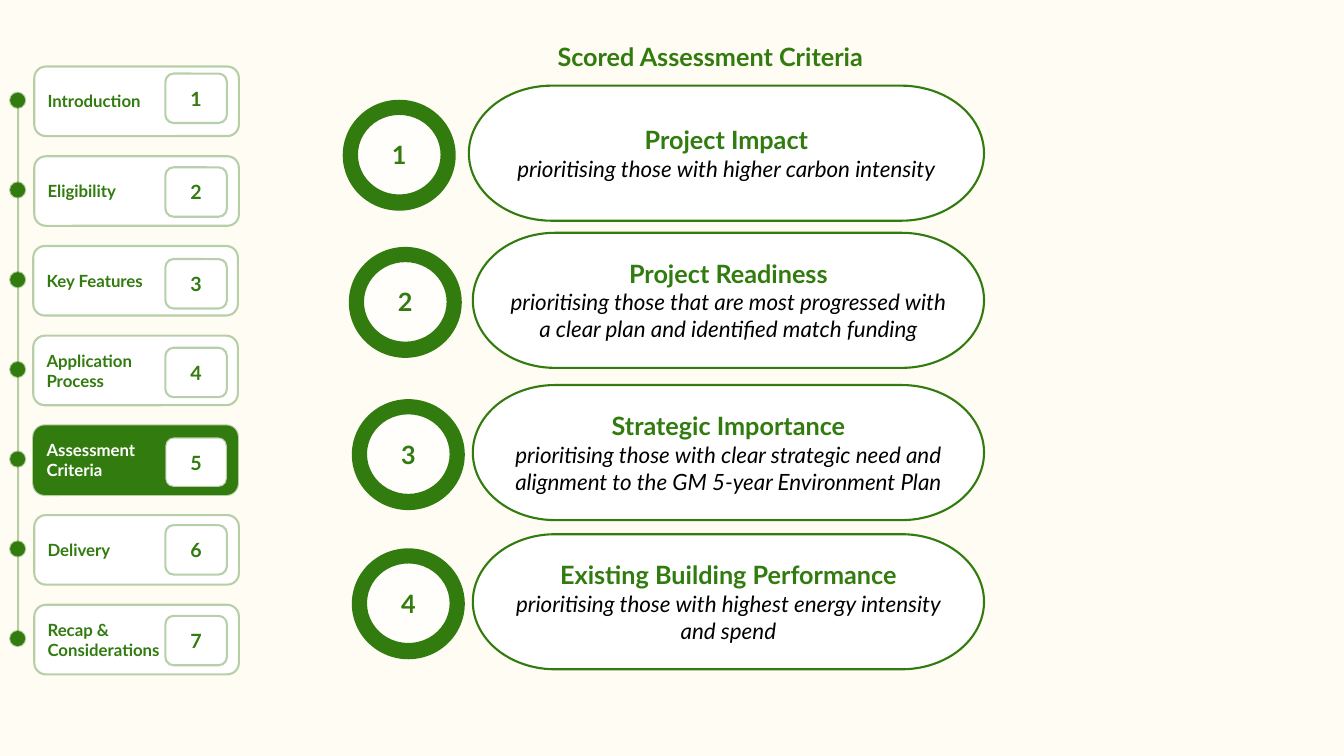
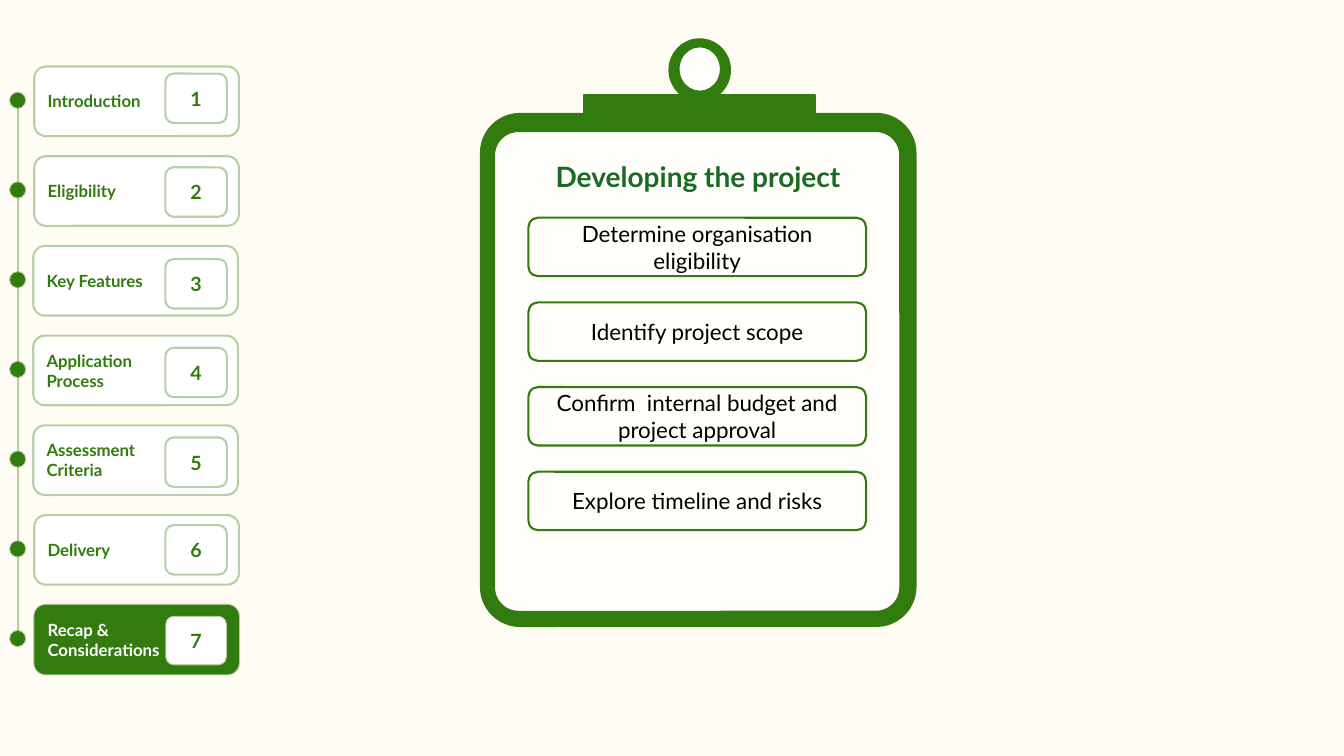
import pptx
import pptx.dml.color
import pptx.enum.shapes
import pptx.enum.text
import pptx.oxml
import pptx.oxml.ns
import pptx.util

SHAPE = pptx.enum.shapes.MSO_SHAPE
ALIGN = pptx.enum.text.PP_ALIGN
MIDDLE = pptx.enum.text.MSO_ANCHOR.MIDDLE
Inches = pptx.util.Inches

FONT = "Lato"
GREEN = "327B0F"
TITLE_GREEN = "196B24"
CREAM = "FFFCF3"
PAPER = "FFFEFB"
WHITE = "FFFFFF"
BLACK = "000000"
LINE_WIDTH = 1.5
FADED = 35

# Each section: label lines, left edge of its box, drop of its number below the box top
SECTIONS = [
    (["Introduction"], 0.34, 0.07),
    (["Eligibility"], 0.34, 0.11),
    (["Key Features"], 0.33, 0.13),
    (["Application", "Process"], 0.33, 0.12),
    (["Assessment", "Criteria"], 0.33, 0.12),
    (["Delivery"], 0.34, 0.1),
    (["Recap &", "Considerations"], 0.34, 0.11),
]
SECTION_TOP, SECTION_PITCH = 0.66, 0.89

# Each criterion: name, explanation, left edge of its ring, left and top edge of its pill
CRITERIA = [
    ("Project Impact", "prioritising those with higher carbon intensity", 3.41, 4.65, 0.85),
    ("Project Readiness",
     "prioritising those that are most progressed with a clear plan and identified match funding",
     3.47, 4.69, 2.31),
    ("Strategic Importance",
     "prioritising those with clear strategic need and alignment to the GM 5-year Environment Plan",
     3.5, 4.69, 3.82),
    ("Existing Building Performance",
     "prioritising those with highest energy intensity and spend", 3.5, 4.69, 5.3),
]
PILL_RIGHT = 9.76

STEPS = [
    "Determine organisation eligibility",
    "Identify project scope",
    "Confirm  internal budget and project approval",
    "Explore timeline and risks",
]
STEP_TOP, STEP_PITCH = 2.16, 0.84


def color(value):
    return pptx.dml.color.RGBColor.from_string(value)


def style_line(line, opacity=100):
    line.color.rgb = color(GREEN)
    line.width = pptx.util.Pt(LINE_WIDTH)
    if opacity < 100:
        tint = line.fill._xPr.find(".//" + pptx.oxml.ns.qn("a:srgbClr"))
        alpha = pptx.oxml.parse_xml(
            f'<a:alpha {pptx.oxml.ns.nsdecls("a")} val="{opacity * 1000}"/>')
        tint.append(alpha)


def add_box(shapes, kind, left, top, width, height, fill, opacity=100, corner=None):
    box = shapes.add_shape(kind, Inches(left), Inches(top), Inches(width), Inches(height))
    box.shadow.inherit = False
    box.fill.solid()
    box.fill.fore_color.rgb = color(fill)
    style_line(box.line, opacity)
    if corner is not None:
        box.adjustments[0] = corner
    return box


def add_line(shapes, left, top, bottom, opacity):
    line = shapes.add_connector(pptx.enum.shapes.MSO_CONNECTOR.STRAIGHT,
                                Inches(left), Inches(top), Inches(left), Inches(bottom))
    style_line(line.line, opacity)
    effects = pptx.oxml.parse_xml(f'<a:effectLst {pptx.oxml.ns.nsdecls("a")}/>')
    line._element.spPr.append(effects)


def write(box, lines, size, ink, bold=False, align=ALIGN.CENTER):
    """Fill the box with one paragraph for each line, all in one style."""
    frame = box.text_frame
    frame.word_wrap = True
    frame.vertical_anchor = MIDDLE
    frame.text = "\n".join(lines)
    for para in frame.paragraphs:
        para.alignment = align
        style_font(para.font, size, ink, bold)


def style_font(font, size, ink, bold=False, italic=False):
    font.name = FONT
    font.size = pptx.util.Pt(size)
    font.bold = bold
    font.italic = italic
    font.color.rgb = color(ink)


def add_title(slide, text, left, top, width, height, size, ink):
    """Fill the title placeholder and bring it in front of what is drawn so far."""
    title = slide.shapes.title
    title.left, title.top = Inches(left), Inches(top)
    title.width, title.height = Inches(width), Inches(height)
    write(title, [text], size, ink, bold=True, align=ALIGN.LEFT)
    title.text_frame.auto_size = pptx.enum.text.MSO_AUTO_SIZE.SHAPE_TO_FIT_TEXT
    slide.shapes._spTree.append(title._element)


def add_navigation(slide, current):
    """Draw the section list with the current section (counted from 1) filled."""
    shapes = slide.shapes.add_group_shape().shapes
    for index, (label, left, drop) in enumerate(SECTIONS):
        number = index + 1
        top = SECTION_TOP + index * SECTION_PITCH
        fill, ink = (GREEN, WHITE) if number == current else (WHITE, GREEN)
        box = add_box(shapes, SHAPE.ROUNDED_RECTANGLE, left, top, 2.03, 0.69, fill, FADED)
        write(box, label, 12, ink, bold=True, align=ALIGN.LEFT)
        badge = add_box(shapes, SHAPE.ROUNDED_RECTANGLE, 1.64, top + drop, 0.61, 0.49,
                        WHITE, FADED)
        write(badge, [str(number)], 14, GREEN, bold=True)

    dot_top, dot_size = 0.92, 0.15
    last_dot_top = dot_top + (len(SECTIONS) - 1) * SECTION_PITCH
    add_line(shapes, 0.18, dot_top, last_dot_top + dot_size / 2, FADED)
    for index in range(len(SECTIONS)):
        add_box(shapes, SHAPE.OVAL, 0.1, dot_top + index * SECTION_PITCH,
                dot_size, dot_size, GREEN, FADED)


def add_criterion(shapes, number, name, explanation, ring_left, pill_left, pill_top):
    ring_top = pill_top + 0.15
    add_box(shapes, SHAPE.OVAL, ring_left, ring_top, 1.1, 1.08, GREEN)
    disc = add_box(shapes, SHAPE.OVAL, ring_left + 0.13, ring_top + 0.13, 0.84, 0.81, PAPER)
    write(disc, [str(number)], 18, GREEN, bold=True)
    pill = add_box(shapes, SHAPE.FLOWCHART_TERMINATOR, pill_left, pill_top,
                   PILL_RIGHT - pill_left, 1.34, WHITE)
    write(pill, [name, explanation], 18, GREEN, bold=True)
    style_font(pill.text_frame.paragraphs[1].font, 16, BLACK, italic=True)


def add_clipboard(shapes):
    add_box(shapes, SHAPE.ROUNDED_RECTANGLE, 4.77, 1.13, 4.31, 5.08, GREEN, corner=0.09)
    add_box(shapes, SHAPE.ROUNDED_RECTANGLE, 4.9, 1.3, 4.03, 4.77, PAPER, corner=0.06)
    add_box(shapes, SHAPE.RECTANGLE, 5.79, 0.94, 2.29, 0.2, GREEN)
    add_box(shapes, SHAPE.OVAL, 6.64, 0.39, 0.6, 0.61, GREEN)
    add_box(shapes, SHAPE.OVAL, 6.73, 0.46, 0.42, 0.45, PAPER)


def add_page(deck):
    title_only = deck.slide_layouts[5]
    return deck.slides.add_slide(title_only)


def build_criteria_page(deck):
    page = add_page(deck)
    add_title(page, "Scored Assessment Criteria", 5.43, 0.36, 3.58, 0.4, 18, GREEN)
    add_navigation(page, current=5)
    shapes = page.shapes.add_group_shape().shapes
    for number, criterion in enumerate(CRITERIA, start=1):
        add_criterion(shapes, number, *criterion)


def build_recap_page(deck):
    page = add_page(deck)
    shapes = page.shapes.add_group_shape().shapes
    add_clipboard(shapes)
    for index, step in enumerate(STEPS):
        box = add_box(shapes, SHAPE.ROUNDED_RECTANGLE, 5.24, STEP_TOP + index * STEP_PITCH,
                      3.35, 0.58, PAPER)
        write(box, [step], 16, BLACK)
    add_title(page, "Developing the project", 5.41, 1.53, 3.2, 0.44, 20, TITLE_GREEN)
    add_navigation(page, current=7)


def main():
    deck = pptx.Presentation()
    deck.slide_width, deck.slide_height = Inches(13.33), Inches(7.5)
    background = deck.slide_master.background.fill
    background.solid()
    background.fore_color.rgb = color(CREAM)
    build_criteria_page(deck)
    build_recap_page(deck)
    deck.save("out.pptx")


if __name__ == "__main__":
    main()
